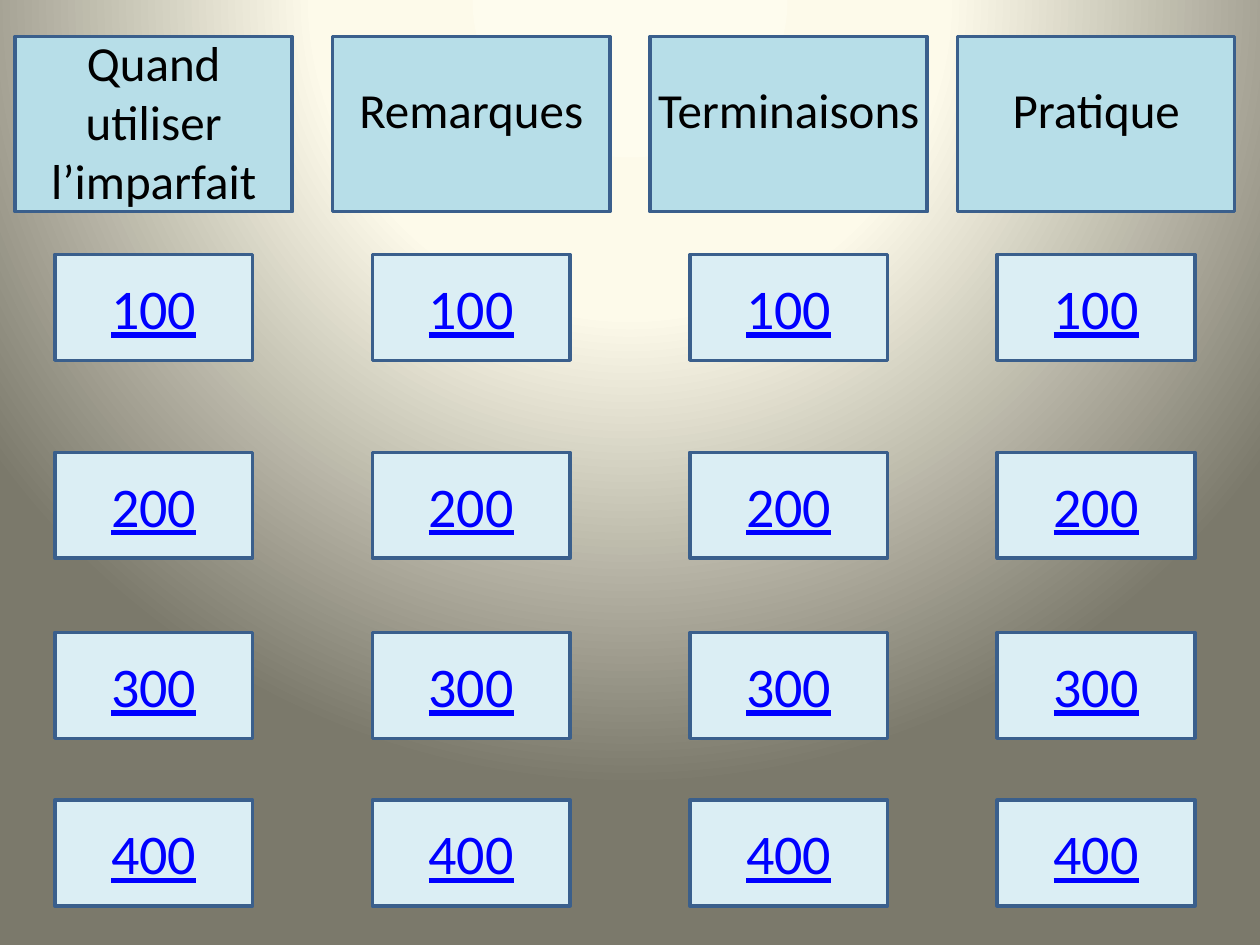
"""Build a French imparfait quiz board with four categories and four point values."""
import pptx
import pptx.util
import pptx.dml.color
import pptx.enum.shapes
import pptx.enum.text
import pptx.oxml
import pptx.oxml.ns

RGBColor = pptx.dml.color.RGBColor
Inches = pptx.util.Inches

HEADING_FILL = RGBColor(0xB7, 0xDE, 0xE8)
VALUE_FILL = RGBColor(0xDB, 0xEE, 0xF4)
BORDER = RGBColor(0x3A, 0x5F, 0x8C)
HEADING_INK = RGBColor(0, 0, 0)
VALUE_INK = RGBColor(0, 0, 0xFF)
GLOW_STOPS = [
    (0, RGBColor(0xFE, 0xFC, 0xEE)),
    (40, RGBColor(0xFD, 0xFA, 0xEA)),
    (100, RGBColor(0x7B, 0x79, 0x6B)),
]

ONE_LINE = (0.58, 0.57)
THREE_LINES = (0.21, 1.51)
CATEGORIES = [
    ("Quand utiliser l’imparfait", 0.12, 2.2, THREE_LINES),
    ("Remarques", 2.64, 2.2, ONE_LINE),
    ("Terminaisons", 5.16, 2.36, ONE_LINE),
    ("Pratique", 7.6, 2.2, ONE_LINE),
]
VALUES = [("100", 2.02), ("200", 3.59), ("300", 5.02), ("400", 6.35)]

HEADING_TOP = 0.29
HEADING_SIZE = (2.2, 1.39)
VALUE_SIZE = (1.57, 0.84)
VALUE_TEXT_SIZE = (1.42, 0.64)


def paint_glow(slide):
    slide.background.fill.gradient()
    stops = "".join(
        f'<a:gs pos="{share * 1000}"><a:srgbClr val="{color}"/></a:gs>'
        for share, color in GLOW_STOPS
    )
    glow = pptx.oxml.parse_xml(
        f'<a:gradFill {pptx.oxml.ns.nsdecls("a")} rotWithShape="1">'
        f"<a:gsLst>{stops}</a:gsLst>"
        '<a:path path="circle">'
        '<a:fillToRect l="50000" t="-80000" r="50000" b="180000"/>'
        "</a:path></a:gradFill>"
    )
    linear = slide.background._cSld.find(".//" + pptx.oxml.ns.qn("a:gradFill"))
    linear.getparent().replace(linear, glow)


def add_card(slide, center, top, size, fill):
    width, height = size
    card = slide.shapes.add_shape(
        pptx.enum.shapes.MSO_SHAPE.RECTANGLE,
        Inches(center - width / 2), Inches(top), Inches(width), Inches(height),
    )
    card.shadow.inherit = False
    card.fill.solid()
    card.fill.fore_color.rgb = fill
    card.line.color.rgb = BORDER
    card.line.width = pptx.util.Pt(2)


def add_label(slide, text, center, top, size, points, ink, underline=None):
    width, height = size
    label = slide.shapes.add_textbox(
        Inches(center - width / 2), Inches(top), Inches(width), Inches(height)
    )
    frame = label.text_frame
    frame.word_wrap = True
    frame.auto_size = pptx.enum.text.MSO_AUTO_SIZE.SHAPE_TO_FIT_TEXT
    paragraph = frame.paragraphs[0]
    paragraph.text = text
    paragraph.alignment = pptx.enum.text.PP_ALIGN.CENTER
    paragraph.font.name = "Calibri"
    paragraph.font.size = pptx.util.Pt(points)
    paragraph.font.color.rgb = ink
    paragraph.font.underline = underline


def main():
    deck = pptx.Presentation()
    deck.slide_width, deck.slide_height = Inches(10), Inches(7.5)
    board = deck.slides.add_slide(deck.slide_layouts[6])
    paint_glow(board)
    value_inset = (VALUE_SIZE[1] - VALUE_TEXT_SIZE[1]) / 2
    for heading, left, text_width, (text_top, text_height) in CATEGORIES:
        center = left + HEADING_SIZE[0] / 2
        add_card(board, center, HEADING_TOP, HEADING_SIZE, HEADING_FILL)
        add_label(board, heading, center, text_top, (text_width, text_height),
                  28, HEADING_INK)
        for value, top in VALUES:
            add_card(board, center, top, VALUE_SIZE, VALUE_FILL)
            add_label(board, value, center, top + value_inset, VALUE_TEXT_SIZE,
                      32, VALUE_INK, underline=True)
    deck.save("out.pptx")


if __name__ == "__main__":
    main()
